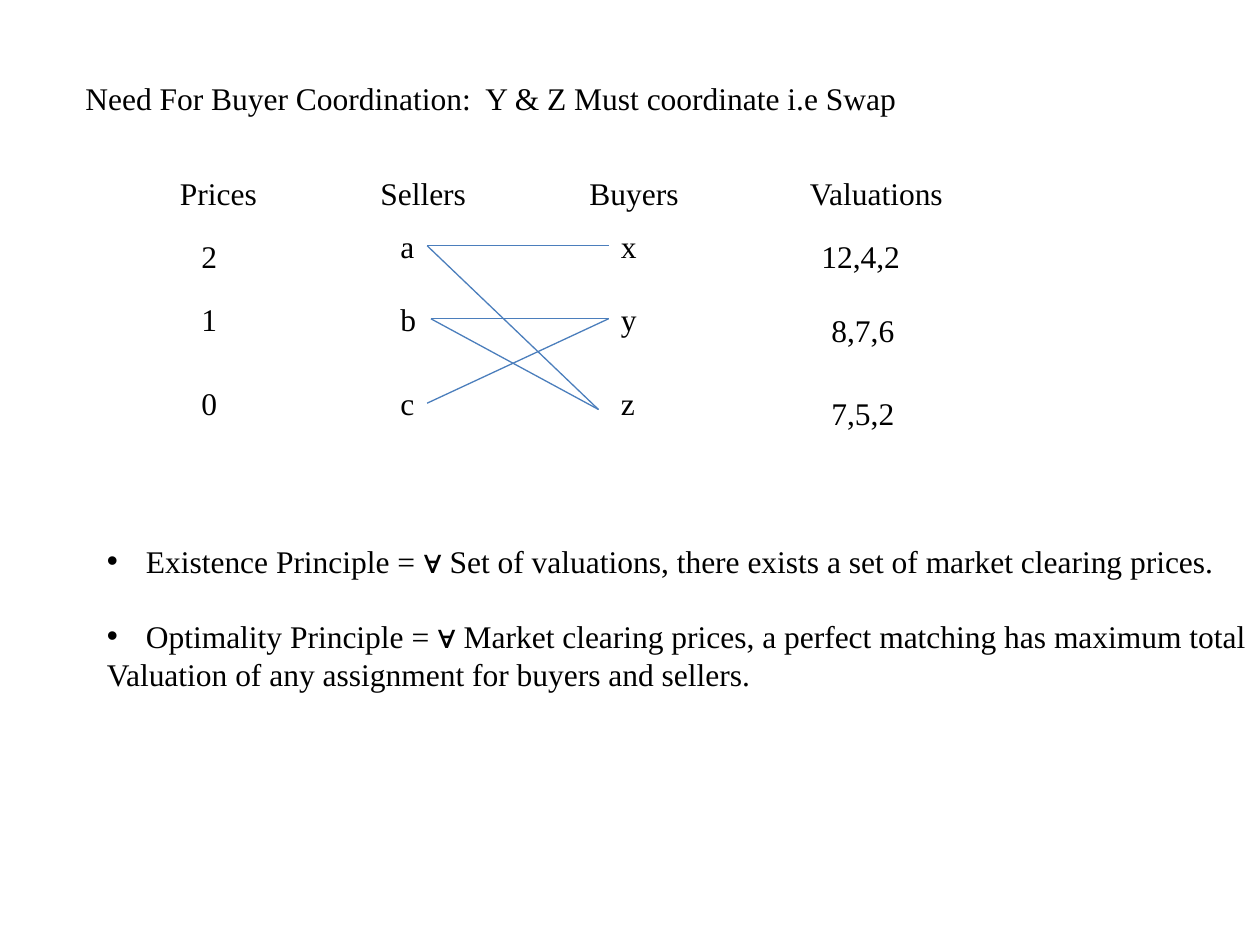
from lxml import etree
from pptx import Presentation
from pptx.dml.color import RGBColor
from pptx.enum.shapes import MSO_CONNECTOR as CONNECTOR
from pptx.enum.text import MSO_AUTO_SIZE as AUTO_SIZE
from pptx.oxml.ns import qn
from pptx.util import Inches, Pt

BLACK = RGBColor(0x00, 0x00, 0x00)
EDGE_BLUE = RGBColor(0x4B, 0x7E, 0xBC)
RIGHT_SIDE, LEFT_SIDE = 3, 1

prs = Presentation()
prs.slide_width, prs.slide_height = Inches(10), Inches(7.5)
slide = prs.slides.add_slide(prs.slide_layouts[6])


def add_text(text, left, top, width, height=0.4, size=18, font="Times New Roman"):
    """Add a text box with one paragraph for each line of text."""
    box = slide.shapes.add_textbox(Inches(left), Inches(top), Inches(width), Inches(height))
    frame = box.text_frame
    frame.word_wrap = False
    frame.auto_size = AUTO_SIZE.SHAPE_TO_FIT_TEXT
    frame.text = text
    for paragraph in frame.paragraphs:
        paragraph.font.size = Pt(size)
        for run in paragraph.runs:
            run.font.size = Pt(size)
            run.font.name = font
            run.font.color.rgb = BLACK
    return box


add_text("Need For Buyer Coordination:  Y & Z Must coordinate i.e Swap", 0.58, 0.58, 6.7)

# Column headings
for heading, left, width in [
    ("Prices", 1.33, 0.82),
    ("Sellers", 2.92, 0.89),
    ("Buyers", 4.58, 0.92),
    ("Valuations", 6.33, 1.27),
]:
    add_text(heading, left, 1.33, width)

# Prices and valuations
for price, top in [("2", 1.83), ("1", 2.33), ("0", 3)]:
    add_text(price, 1.5, top, 0.33)
for valuation, left, top, width in [
    ("12,4,2", 6.42, 1.83, 0.84),
    ("8,7,6", 6.5, 2.42, 0.71),
    ("7,5,2", 6.5, 3.08, 0.71),
]:
    add_text(valuation, left, top, width)

# Sellers and buyers
nodes = {}
for seller, buyer, top, seller_width, buyer_width in [
    ("a", "x", 1.75, 0.31, 0.31),
    ("b", "y", 2.33, 0.34, 0.33),
    ("c", "z", 3, 0.31, 0.31),
]:
    nodes[seller] = add_text(seller, 3.08, top, seller_width)
    nodes[buyer] = add_text(buyer, 4.83, top, buyer_width)

# Preferred-seller edges; those to z stop just short of its label
for seller, buyer in ["ax", "az", "by", "bz", "cy"]:
    edge = slide.shapes.add_connector(
        CONNECTOR.STRAIGHT, Inches(3.4), Inches(1.95), Inches(4.75), Inches(3.25))
    edge.begin_connect(nodes[seller], RIGHT_SIDE)
    if buyer != "z":
        edge.end_connect(nodes[buyer], LEFT_SIDE)
    edge.line.color.rgb = EDGE_BLUE
    edge.line.width = Pt(0.75)
    etree.SubElement(edge._element.spPr, qn("a:effectLst"))

# Principles
principles = add_text(
    "Existence Principle = ∀ Set of valuations, there exists a set of market clearing prices.\n"
    "Optimality Principle = ∀ Market clearing prices, a perfect matching has maximum total\n"
    "Valuation of any assignment for buyers and sellers.",
    0.75, 4.25, 9.4, height=1.31)
existence, optimality, _ = principles.text_frame.paragraphs
optimality.space_before = Pt(21.5)
for principle in (existence, optimality):
    properties = principle._p.get_or_add_pPr()
    properties.set("marL", str(Inches(0.31)))
    properties.set("indent", str(Inches(-0.31)))
    etree.SubElement(properties, qn("a:buFont"), typeface="Arial")
    etree.SubElement(properties, qn("a:buChar"), char="•")
    # Default run properties must follow the bullet
    properties.append(properties.find(qn("a:defRPr")))

prs.save("out.pptx")
